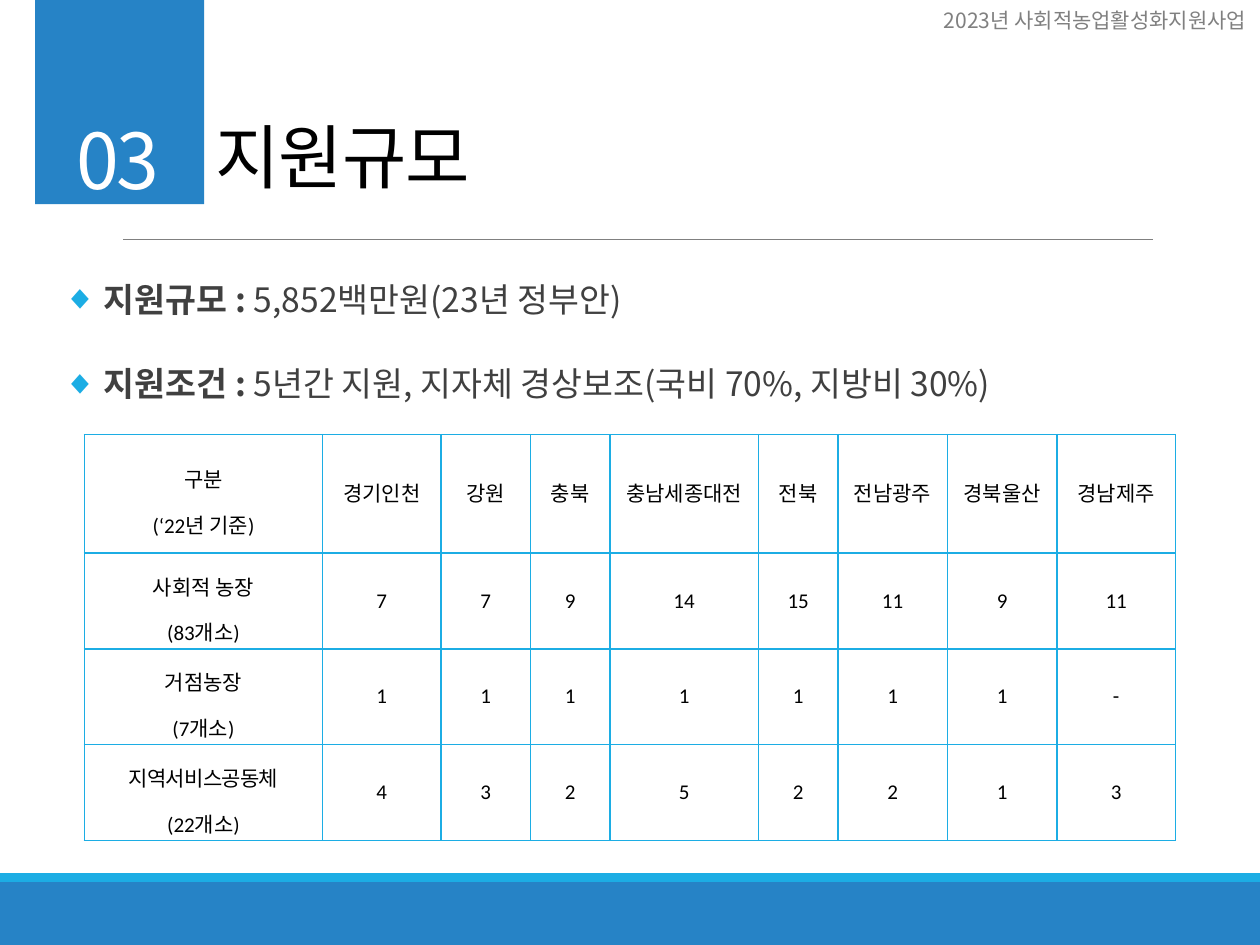
from lxml.etree import SubElement
from pptx import Presentation
from pptx.dml.color import RGBColor
from pptx.enum.shapes import MSO_CONNECTOR, MSO_SHAPE
from pptx.enum.text import MSO_ANCHOR, MSO_AUTO_SIZE, PP_ALIGN
from pptx.oxml import parse_xml
from pptx.oxml.ns import nsdecls, qn
from pptx.util import Inches, Pt

WIDE, HIGH = Inches(10), Inches(7.5)
BLUE, CYAN, GRAY, DARK = "2683C6", "1CADE4", "808080", "404040"
BLACK, WHITE = "000000", "FFFFFF"
NOTO, CALI = "Noto Sans CJK KR", "Calibri"

COLS = [1.89, 0.94, 0.71, 0.63, 1.18, 0.63, 0.87, 0.87, 0.94]
ROWS = [0.94] + [0.76] * 3
DATA = [
    ["구분\n(‘22년 기준)", "경기인천", "강원", "충북", "충남세종대전",
     "전북", "전남광주", "경북울산", "경남제주"],
    ["사회적 농장\n(83개소)", *"7 7 9 14 15 11 9 11".split()],
    ["거점농장\n(7개소)", *"1 1 1 1 1 1 1 -".split()],
    ["지역서비스공동체\n(22개소)", *"4 3 2 5 2 2 1 3".split()],
]
ITEMS = [
    ("지원규모 : ", "5,852백만원(23년 정부안)"),
    ("지원조건 : ", "5년간 지원, 지자체 경상보조(국비 70%, 지방비 30%)"),
]


def color(code):
    return RGBColor.from_string(code)


def place(shape, x, y, w, h):
    shape.left, shape.top = Inches(x), Inches(y)
    shape.width, shape.height = Inches(w), Inches(h)


def add_run(para, text, size, font, code, bold=None, track=0):
    run = para.add_run()
    run.text = text
    run.font.size, run.font.name, run.font.bold = Pt(size), font, bold
    run.font.color.rgb = color(code)
    if track:
        run.font._element.set("spc", str(round(track * 100)))


def hang(para, size):
    props = para._p.get_or_add_pPr()
    props.set("marL", str(Inches(size)))
    props.set("indent", str(-Inches(size)))
    return props


def add_rect(shapes, x, y, w, h, code):
    rect = shapes.add_shape(MSO_SHAPE.RECTANGLE, Inches(x), Inches(y),
                            Inches(w), Inches(h))
    rect.shadow.inherit = False
    rect.fill.solid()
    rect.fill.fore_color.rgb = color(code)
    rect.line.fill.background()


def add_rule(shapes, x, y, end):
    rule = shapes.add_connector(MSO_CONNECTOR.STRAIGHT, Inches(x), Inches(y),
                                Inches(end), Inches(y))
    rule.line.color.rgb = color(GRAY)
    rule.line.width = Pt(0.5)
    SubElement(rule._element.spPr, qn("a:effectLst"))


def add_text(shapes, x, y, w, h, text, size, code, align, track=0):
    box = shapes.add_textbox(Inches(x), Inches(y), Inches(w), Inches(h))
    frame = box.text_frame
    frame.word_wrap = False
    para = frame.paragraphs[0]
    para.alignment = align
    add_run(para, text, size, NOTO, code, track=track)


def fill_title(title):
    place(title, 1.61, 0.37, 2.53, 1.25)
    frame = title.text_frame
    frame.auto_size = MSO_AUTO_SIZE.NONE
    frame.vertical_anchor = MSO_ANCHOR.BOTTOM
    para = frame.paragraphs[0]
    para.alignment, para.line_spacing = PP_ALIGN.LEFT, 0.85
    add_run(para, "지원규모", 40, CALI, BLACK, track=-0.5)


def fill_body(body):
    place(body, 0.5, 2, 9.3, 4.96)
    frame = body.text_frame
    frame.auto_size = MSO_AUTO_SIZE.NONE
    frame.margin_left = frame.margin_right = 0
    for i, (head, text) in enumerate(ITEMS):
        para = frame.add_paragraph() if i else frame.paragraphs[0]
        para.line_spacing = 1.5
        para.space_before, para.space_after = Pt(12), Pt(2)
        props = hang(para, 0.1)
        tint = SubElement(props, qn("a:buClr"))
        SubElement(tint, qn("a:srgbClr")).set("val", CYAN)
        SubElement(props, qn("a:buChar")).set("char", "◆")
        add_run(para, " " + head, 19.2, NOTO, DARK, True)
        add_run(para, text, 19.2, NOTO, DARK, False)


def edge(cell):
    props = cell._tc.get_or_add_tcPr()
    for i, side in enumerate("LRTB"):
        props.insert(i, parse_xml(
            f'<a:ln{side} {nsdecls("a")} w="{Pt(1)}"><a:solidFill>'
            f'<a:srgbClr val="{CYAN}"/></a:solidFill></a:ln{side}>'))


def fill_cell(cell, text, top):
    cell.fill.background()
    edge(cell)
    cell.vertical_anchor = MSO_ANCHOR.MIDDLE
    cell.margin_left = cell.margin_right = Inches(0.07)
    cell.margin_top = cell.margin_bottom = Inches(0.02)
    lines = text.split("\n")
    for i, line in enumerate(lines):
        frame = cell.text_frame
        para = frame.add_paragraph() if i else frame.paragraphs[0]
        para.alignment = PP_ALIGN.CENTER
        if len(lines) > 1:
            para.line_spacing = 1.5
        elif top:
            para.line_spacing = 0.8
        if not top:
            hang(para, 0.16)
        track = -0.4 if line == "지역서비스공동체" else 0
        add_run(para, line, 12, CALI, BLACK, track=track)


def add_grid(shapes):
    table = shapes.add_table(len(ROWS), len(COLS), Inches(0.67), Inches(3.45),
                             Inches(sum(COLS)), Inches(sum(ROWS))).table
    table.first_row = table.horz_banding = False
    for col, size in zip(table.columns, COLS):
        col.width = Inches(size)
    for row, size in zip(table.rows, ROWS):
        row.height = Inches(size)
    for r, line in enumerate(DATA):
        for c, text in enumerate(line):
            fill_cell(table.cell(r, c), text, r == 0)


def main():
    deck = Presentation()
    deck.slide_width, deck.slide_height = WIDE, HIGH
    slide = deck.slides.add_slide(deck.slide_layouts[1])
    shapes = slide.shapes

    # Footer bands, rule and running head
    add_rect(shapes, 0, 7, 10, 0.5, BLUE)
    add_rect(shapes, 0, 6.93, 10, 0.07, CYAN)
    add_rule(shapes, 0.98, 1.9, 9.15)
    add_text(shapes, 7.08, 0.01, 2.91, 0.3, "2023년 사회적농업활성화지원사업",
             12, GRAY, PP_ALIGN.RIGHT)

    # Title, list and table
    fill_title(shapes.title)
    fill_body(slide.placeholders[1])
    add_grid(shapes)

    # Section number
    badge = shapes.add_group_shape().shapes
    add_rect(badge, 0.28, 0, 1.34, 1.62, BLUE)
    add_text(badge, 0.51, 0.84, 0.94, 0.84, "03", 44, WHITE,
             PP_ALIGN.LEFT, -1.5)

    deck.save("out.pptx")


if __name__ == "__main__":
    main()
